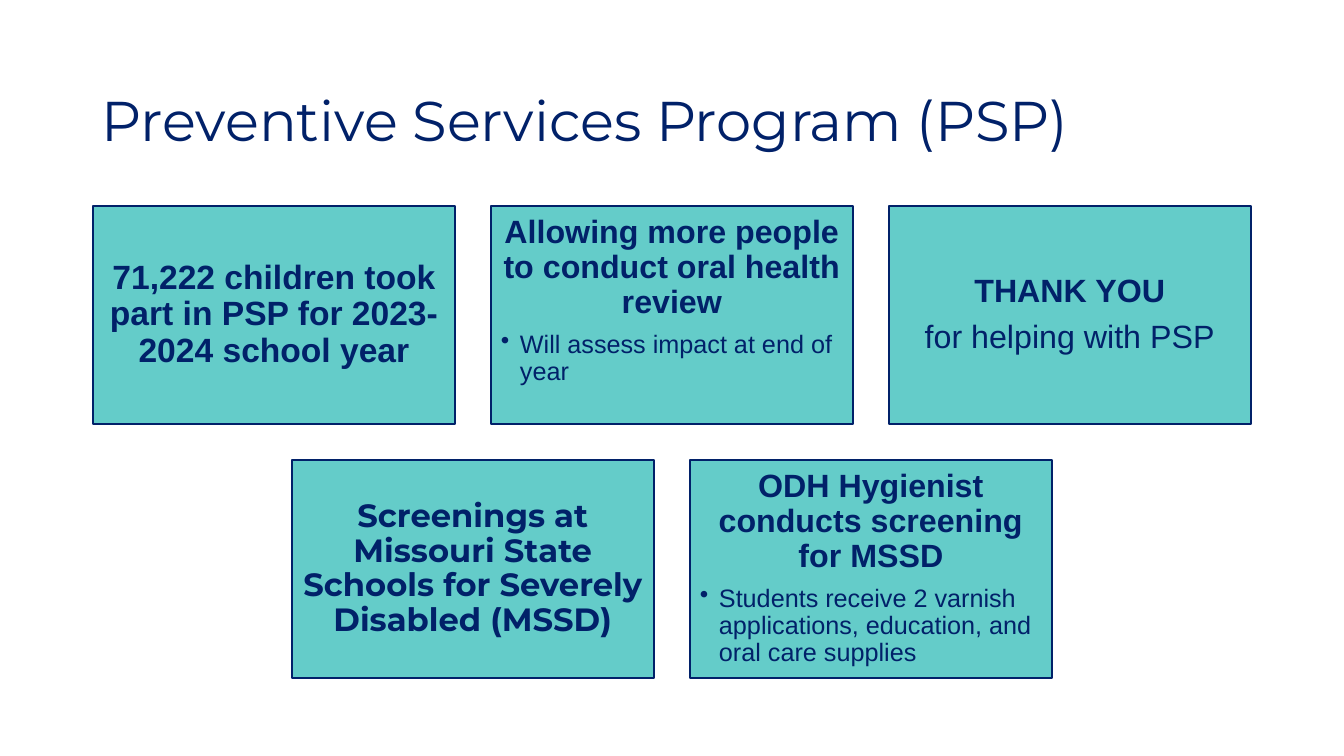
from lxml import etree
from pptx import Presentation
from pptx import util as u
from pptx.dml.color import RGBColor
from pptx.enum import shapes, text
from pptx.oxml.ns import qn

# Content: each card is a list of (kind, words)
TITLE = "Preventive Services Program (PSP)"
ROWS = [
    [
        [("lead", "71,222 children took part in PSP for 2023-2024 school year")],
        [("head", "Allowing more people to conduct oral health review"),
         ("bullet", "Will assess impact at end of year")],
        [("head", "THANK YOU"), ("plain", "for helping with PSP")],
    ],
    [
        [("brand", "Screenings at Missouri State Schools for Severely Disabled (MSSD)")],
        [("head", "ODH Hygienist conducts screening for MSSD"),
         ("bullet", "Students receive 2 varnish applications, education, and "
                    "oral care supplies")],
    ],
]

# Theme
THEME = {
    "navy": RGBColor.from_string("012169"),
    "teal": RGBColor.from_string("64CCC9"),
    "title": dict(size=40, font="Montserrat"),
    "lead": dict(size=24, bold=True, center=True, after=8.4),
    "head": dict(size=23, bold=True, center=True, after=8),
    "plain": dict(size=23, center=True, after=8),
    "brand": dict(size=23, bold=True, center=True, after=8, font="Montserrat"),
    "bullet": dict(size=18, after=2.7, bullet=True),
}

# Layout in px
SLIDE_W, SLIDE_H = 1344, 756
TITLE_BOX = (92, 61, 1159, 125)
CARD_W, CARD_H, GAP = 362, 218, 36
TOP, PAD, INDENT = 206, 10, 19


def px(n):
    return u.Emu(round(n * 914400 / 100.8))


def add_text(p, words, size, font="Arial", bold=False, center=False,
             after=0, bullet=False):
    p.alignment = text.PP_ALIGN.CENTER if center else text.PP_ALIGN.LEFT
    p.line_spacing = 0.9
    p.space_before, p.space_after = u.Pt(0), u.Pt(after)
    if bullet:
        pPr = p._p.get_or_add_pPr()
        pPr.set("marL", str(px(INDENT)))
        pPr.set("indent", str(-px(INDENT)))
        etree.SubElement(pPr, qn("a:buChar")).set("char", "•")
    r = p.add_run()
    r.text = words
    r.font.name, r.font.size, r.font.bold = font, u.Pt(size), bold
    r.font.color.rgb = THEME["navy"]


def add_card(s, x, y, paragraphs):
    sp = s.shapes.add_shape(shapes.MSO_SHAPE.RECTANGLE,
                            px(x), px(y), px(CARD_W), px(CARD_H))
    sp.shadow.inherit = False
    sp.fill.solid()
    sp.fill.fore_color.rgb = THEME["teal"]
    sp.line.color.rgb = THEME["navy"]
    sp.line.width = u.Pt(1)
    tf = sp.text_frame
    tf.word_wrap = True
    tf.margin_left = tf.margin_right = tf.margin_top = tf.margin_bottom = px(PAD)
    has_bullet = any(kind == "bullet" for kind, _ in paragraphs)
    tf.vertical_anchor = (text.MSO_ANCHOR.TOP if has_bullet
                          else text.MSO_ANCHOR.MIDDLE)
    for i, (kind, words) in enumerate(paragraphs):
        p = tf.add_paragraph() if i else tf.paragraphs[0]
        add_text(p, words, **THEME[kind])


def main():
    prs = Presentation()
    prs.slide_width, prs.slide_height = px(SLIDE_W), px(SLIDE_H)
    s = prs.slides.add_slide(prs.slide_layouts[6])

    # Title
    tf = s.shapes.add_textbox(*map(px, TITLE_BOX)).text_frame
    tf.word_wrap = True
    tf.vertical_anchor = text.MSO_ANCHOR.MIDDLE
    add_text(tf.paragraphs[0], TITLE, **THEME["title"])

    # Cards, each row centred on the slide
    for row, cards in enumerate(ROWS):
        width = len(cards) * (CARD_W + GAP) - GAP
        left = (SLIDE_W - width) // 2
        for col, paragraphs in enumerate(cards):
            add_card(s, left + col * (CARD_W + GAP),
                     TOP + row * (CARD_H + GAP), paragraphs)

    prs.save("out.pptx")


if __name__ == "__main__":
    main()
